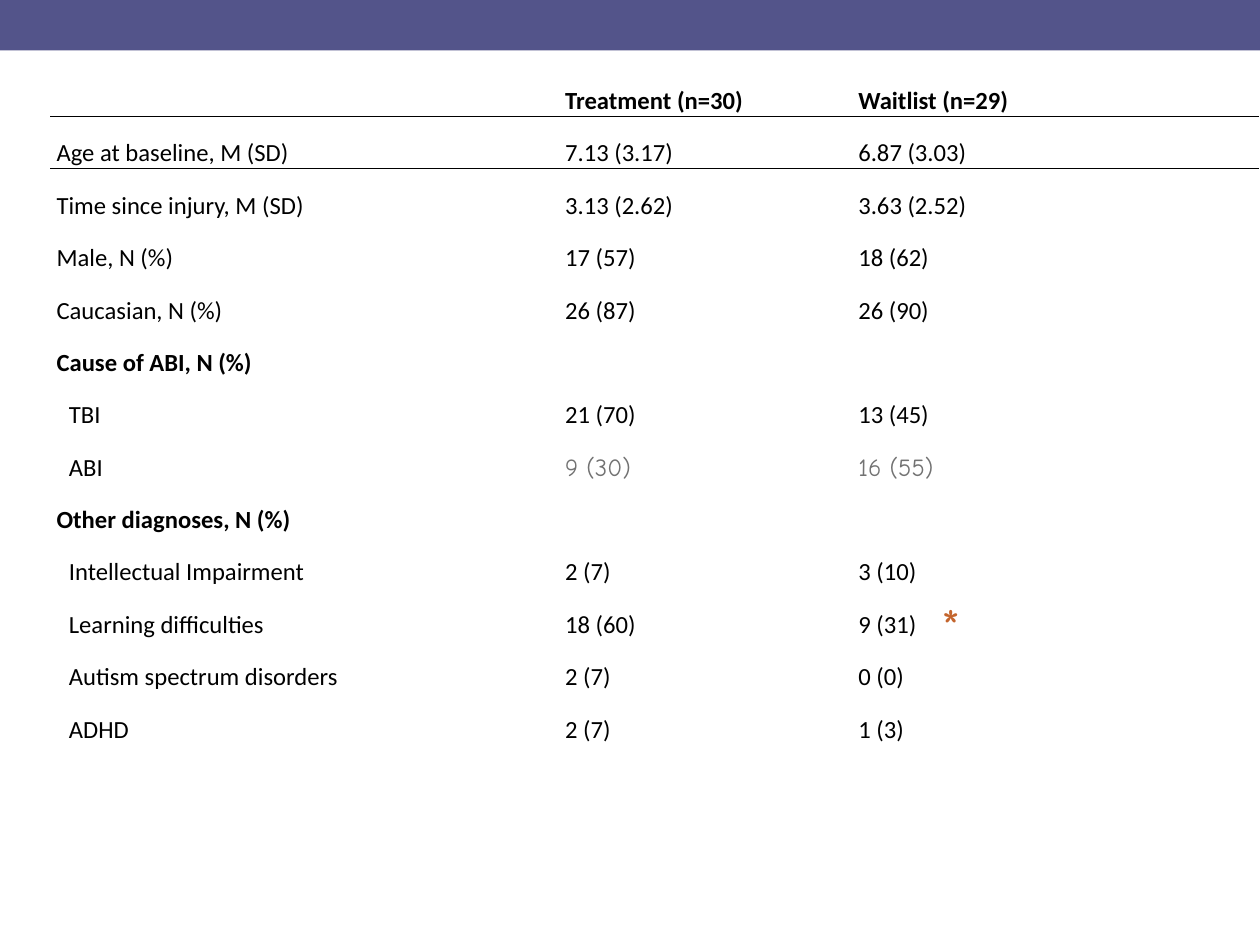
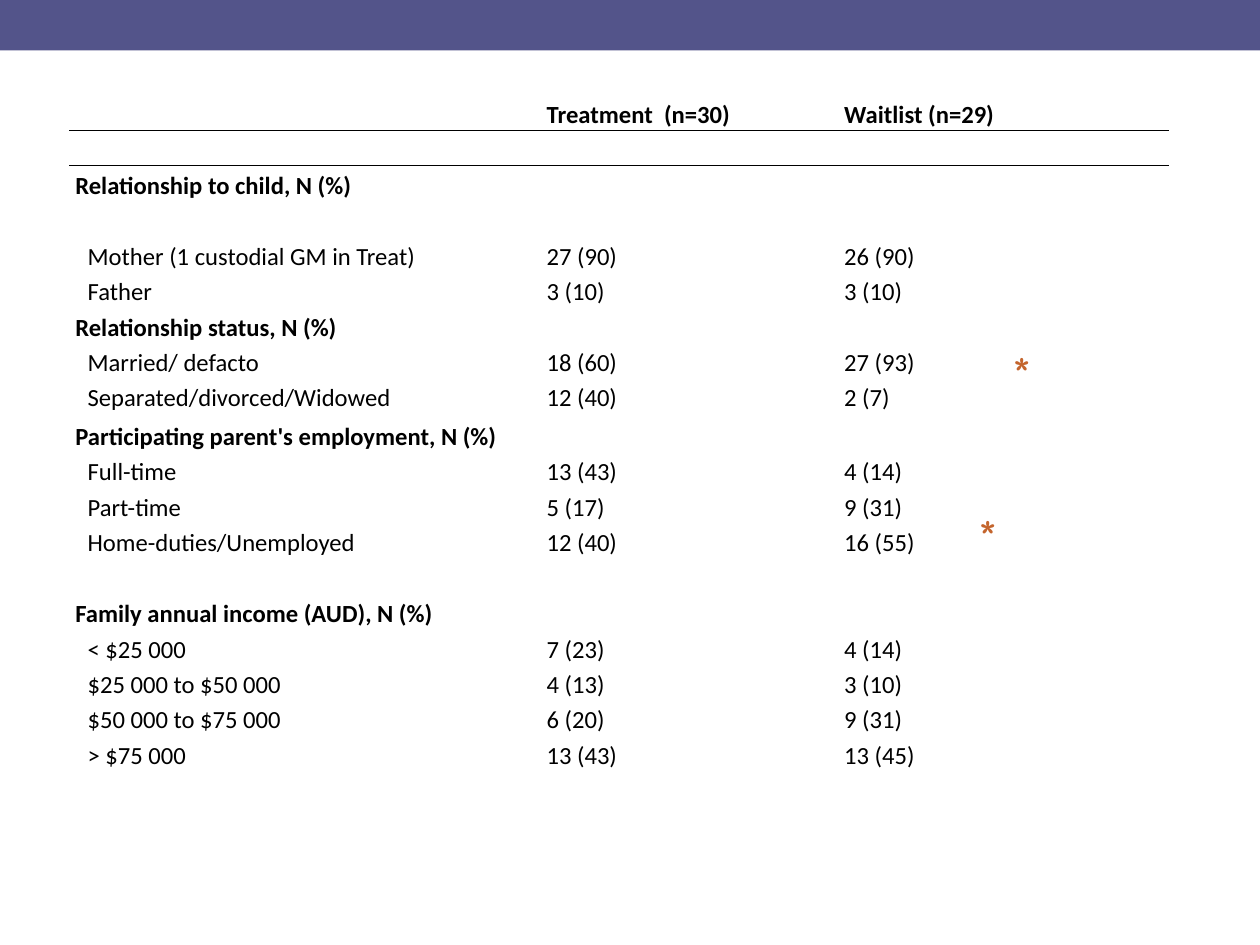
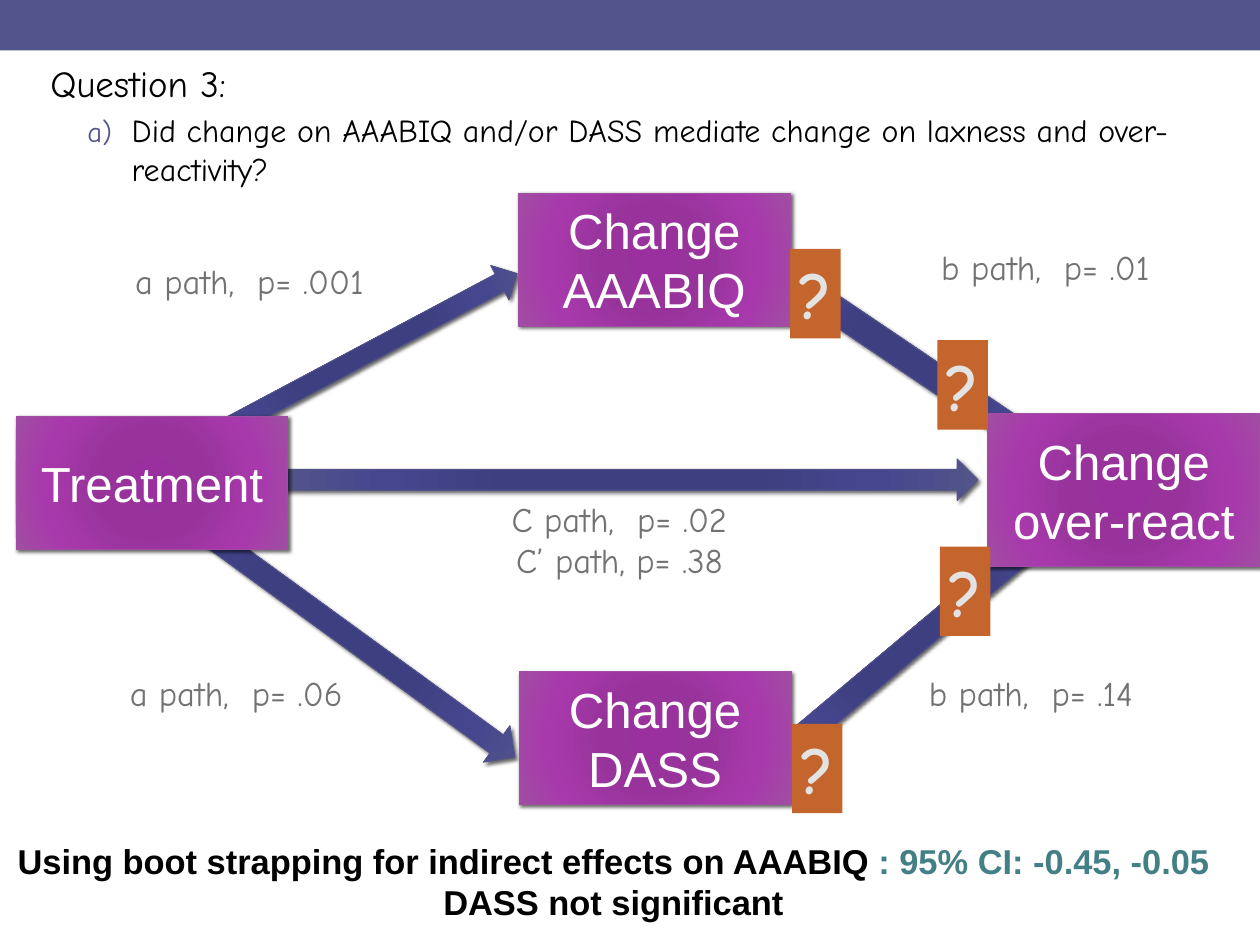
from lxml import etree
from pptx import Presentation
from pptx.dml.color import RGBColor
from pptx.enum.shapes import MSO_SHAPE
from pptx.enum.text import MSO_ANCHOR, PP_ALIGN
from pptx.oxml import parse_xml
from pptx.oxml.ns import qn
from pptx.util import Pt

RECT, ARROW = MSO_SHAPE.RECTANGLE, MSO_SHAPE.RIGHT_ARROW
LEFT, CENTER = PP_ALIGN.LEFT, PP_ALIGN.CENTER
TOP, MIDDLE, BOTTOM = MSO_ANCHOR.TOP, MSO_ANCHOR.MIDDLE, MSO_ANCHOR.BOTTOM

WIDE, HIGH, BAND = 1024, 768, 41
INDIGO, ORANGE, TEAL = "53548A", "C4652D", "438086"
BLACK, WHITE, GREY, PALE, SLATE = "000000", "FFFFFF", "727272", "E3E3E3", "3D405C"
VIOLET = "A04DA3"
INDIGOS = [(0, "3B3D82"), (34, "3E3F80"), (70, "45468E"), (100, INDIGO)]
VIOLETS = [(0, "9A309E"), (34, "97339A"), (70, "A839AC"), (100, VIOLET)]
COMIC, SANS, BODY = "Comic Neue", "Arial", "Calibri"
PLAIN = "{2D5ABB26-0587-4C30-8999-92F81FD0307C}"
DRAWING = 'xmlns:a="http://schemas.openxmlformats.org/drawingml/2006/main"'

# A row with one entry is a section heading; rows below it are indented.
CHILD = [
    ("", "Treatment (n=30)", "Waitlist (n=29)"),
    ("Age at baseline, M (SD)", "7.13 (3.17)", "6.87 (3.03)"),
    ("Time since injury, M (SD)", "3.13 (2.62)", "3.63 (2.52)"),
    ("Male, N (%)", "17 (57)", "18 (62)"),
    ("Caucasian, N (%)", "26 (87)", "26 (90)"),
    ("Cause of ABI, N (%)",),
    ("TBI", "21 (70)", "13 (45)"),
    ("ABI", "9 (30)", "16 (55)"),
    ("Other diagnoses, N (%)",),
    ("Intellectual Impairment", "2 (7)", "3 (10)"),
    ("Learning difficulties", "18 (60)", "9 (31)"),
    ("Autism spectrum disorders", "2 (7)", "0 (0)"),
    ("ADHD", "2 (7)", "1 (3)"),
]
FAMILY = [
    ("", "Treatment  (n=30)", "Waitlist (n=29)"),
    (),
    ("Relationship to child, N (%)",),
    ("Mother (1 custodial GM in Treat)", "27 (90)", "26 (90)"),
    ("Father", "3 (10)", "3 (10)"),
    ("Relationship status, N (%)",),
    ("Married/ defacto", "18 (60)", "27 (93)"),
    ("Separated/divorced/Widowed", "12 (40)", "2 (7)"),
    ("Participating parent's employment, N (%)",),
    ("Full-time", "13 (43)", "4 (14)"),
    ("Part-time", "5 (17)", "9 (31)"),
    ("Home-duties/Unemployed", "12 (40)", "16 (55)"),
    ("Family annual income (AUD), N (%)",),
    ("< $25 000", "7 (23)", "4 (14)"),
    ("$25 000 to $50 000", "4 (13)", "3 (10)"),
    ("$50 000 to $75 000", "6 (20)", "9 (31)"),
    ("> $75 000", "13 (43)", "13 (45)"),
]
TALL = {0: 57.6, 3: 57.6, 7: 24.5, 8: 32.4, 12: 57.6}
TABLES = [
    dict(rows=CHILD, at=(41, 51.8), cols=(413.3, 238.3, 330.5),
         heights=[42.6] * len(CHILD), grey="ABI", stars=[(746, 480.2)]),
    dict(rows=FAMILY, at=(56.2, 48.2), cols=(383, 241.9, 269.3),
         heights=[TALL.get(i, 28.8) for i in range(len(FAMILY))],
         grey=None, stars=[(776.2, 408.2), (803.5, 275.8)]),
]

TITLE = "Question 3:"
ASK = "Did change on AAABIQ and/or DASS mediate change on laxness and over-reactivity?"
BARS = [
    (RECT, (597.6, 508.3, 300.2, 20.2), 320),
    (RECT, (727.2, 169.9, 22.3, 244.1), 124),
]
ARROWS = [
    (ARROW, (151.2, 273.6, 285.8, 31.7), 332),
    (ARROW, (228.2, 373, 566.6, 33.8), 0),
    (ARROW, (85.7, 488.9, 367.9, 36.7), 36),
]
BOXES = [
    ("Change AAABIQ", (421.2, 157, 221, 108)),
    ("Change over-react", (802.8, 336.2, 221, 124.6)),
    ("Change DASS", (421.9, 545.8, 221, 108)),
    ("Treatment", (13, 338.4, 221, 108)),
]
MARKS = [(642.2, 202.3), (761.8, 276.5), (643.7, 588.2), (763.9, 444.2)]
LABELS = [
    (["C path,  p= .02", "C’ path, p= .38"], (52.6, 401, 901.4, 108.7)),
    (["a path,  p= .001"], (46.8, 208.1, 311.8, 41)),
    (["b path,  p= .01"], (710.6, 196.6, 277.9, 41)),
    (["a path,  p= .06"], (36, 542.9, 311.8, 41)),
    (["b path,  p= .14"], (681.8, 542.9, 311.8, 41)),
]
RESULT = [
    [("Using boot strapping for indirect effects on AAABIQ ", BLACK),
     (": 95% CI: -0.45, -0.05", TEAL)],
    [("DASS not significant", BLACK)],
]


def rgb(code):
    return RGBColor.from_string(code)


def style(run, size, font, color, bold=False):
    run.font.size, run.font.name, run.font.bold = Pt(size), font, bold
    run.font.color.rgb = rgb(color)


def line_xml(tag, color, width):
    return parse_xml(f'<a:{tag} {DRAWING} w="{Pt(width)}"><a:solidFill>'
                     f'<a:srgbClr val="{color}"/></a:solidFill></a:{tag}>')


def write(frame, paras, size, font, color, bold=False, align=CENTER):
    """Fill a frame with paragraphs, each a string or a list of (text, color)."""
    frame.word_wrap = True
    for i, parts in enumerate(paras):
        para = frame.paragraphs[0] if i == 0 else frame.add_paragraph()
        para.alignment = align
        if isinstance(parts, str):
            parts = [(parts, color)]
        for text, tint in parts:
            run = para.add_run()
            run.text = text
            style(run, size, font, tint, bold)


def add_text(slide, at, *args, **kw):
    frame = slide.shapes.add_textbox(*map(Pt, at)).text_frame
    write(frame, *args, **kw)
    return frame


def add_flat(slide, at, color):
    shape = slide.shapes.add_shape(RECT, *map(Pt, at))
    shape.shadow.inherit = False
    shape.fill.solid()
    shape.fill.fore_color.rgb = rgb(color)
    shape.line.fill.background()
    return shape


def add_glow(slide, kind, at, stops, turn=0):
    """Add a shape with a radial gradient, thin edge and soft shadow."""
    shape = add_flat(slide, at, stops[-1][1])
    shape.element.spPr.find(qn("a:prstGeom")).set(
        "prst", "rightArrow" if kind == ARROW else "rect")
    shape.rotation = turn
    shape.line.color.rgb = rgb(stops[-1][1])
    shape.line.width = Pt(0.75)
    marks = "".join(f'<a:gs pos="{pos * 1000}"><a:srgbClr val="{color}"/></a:gs>'
                    for pos, color in stops)
    props = shape.element.spPr
    props.replace(props.find(qn("a:solidFill")), parse_xml(
        f'<a:gradFill {DRAWING} rotWithShape="1"><a:gsLst>{marks}</a:gsLst>'
        '<a:path path="circle"><a:fillToRect l="100000" t="100000" r="100000" '
        'b="100000"/></a:path></a:gradFill>'))
    props.find(qn("a:effectLst")).append(parse_xml(
        f'<a:outerShdw {DRAWING} blurRad="{Pt(3)}" dist="{Pt(2)}" dir="2700000" '
        'rotWithShape="0"><a:srgbClr val="000000"><a:alpha val="60000"/>'
        '</a:srgbClr></a:outerShdw>'))
    return shape


def add_band(prs, slide):
    """Draw the top band and move it to the master, so that all slides show it."""
    band = add_flat(slide, (0, 0, WIDE, BAND), INDIGO).element
    band.nvSpPr.cNvPr.set("id", "90")
    prs.slide_master.shapes.element.append(band)


def add_grid(slide, rows, at, cols, heights, grey):
    size = (sum(cols), sum(heights))
    grid = slide.shapes.add_table(len(rows), len(cols), *map(Pt, at + size)).table
    grid.first_row = grid.horz_banding = False
    grid._tbl.tblPr.find(qn("a:tableStyleId")).text = PLAIN
    for col, width in zip(grid.columns, cols):
        col.width = Pt(width)
    nested = False
    for r, row in enumerate(rows):
        grid.rows[r].height = Pt(heights[r])
        head = len(row) == 1
        for c in range(len(cols)):
            cell = grid.cell(r, c)
            cell.fill.background()
            cell.vertical_anchor = BOTTOM
            cell.margin_left = cell.margin_right = Pt(5)
            cell.margin_top = cell.margin_bottom = 0
            if r < 2:
                edge = line_xml("lnT" if r else "lnB", BLACK, 1)
                cell._tc.get_or_add_tcPr().insert(0, edge)
            if c >= len(row) or not row[c]:
                continue
            faint = c > 0 and row[0] == grey
            write(cell.text_frame, [row[c]], 20, COMIC if faint else BODY,
                  GREY if faint else BLACK, r == 0 or head, LEFT)
            para = cell.text_frame.paragraphs[0]
            if not faint:
                para.line_spacing = 1.15
            if c == 0 and nested and not head:
                para._p.get_or_add_pPr().set("marL", str(Pt(10)))
        nested = nested or head


def add_question(slide):
    frame = add_text(slide, (0, 44, WIDE, 158), [TITLE, ASK], 30, COMIC, BLACK,
                     align=LEFT)
    frame.margin_left = frame.margin_right = Pt(10)
    frame.margin_top = frame.margin_bottom = Pt(5)
    title, ask = frame.paragraphs
    title.space_before, ask.space_before = Pt(6), Pt(5.2)
    ask.runs[0].font.size = Pt(26)
    title._p.get_or_add_pPr().set("marL", str(Pt(31)))
    props = ask._p.get_or_add_pPr()
    props.set("marL", str(Pt(97)))
    props.set("indent", str(Pt(-36)))
    color = etree.SubElement(props, qn("a:buClr"))
    etree.SubElement(color, qn("a:srgbClr"), val=INDIGO)
    etree.SubElement(props, qn("a:buSzPct"), val="90000")
    etree.SubElement(props, qn("a:buFont"), typeface=COMIC)
    etree.SubElement(props, qn("a:buAutoNum"), type="alphaLcParenR")


def add_model(slide):
    for kind, at, turn in BARS:
        add_glow(slide, kind, at, INDIGOS, turn)
    add_question(slide)
    for kind, at, turn in ARROWS:
        add_glow(slide, kind, at, INDIGOS, turn)
    for text, at in BOXES:
        frame = add_glow(slide, RECT, at, VIOLETS).text_frame
        frame.vertical_anchor = MIDDLE
        write(frame, [text], 40, SANS, WHITE)
    for spot in MARKS:
        frame = add_flat(slide, spot + (41, 72.7), ORANGE).text_frame
        frame.vertical_anchor = TOP
        write(frame, ["?"], 54, COMIC, PALE, True)
        frame.word_wrap = False
        run = frame.paragraphs[0].runs[0]
        run._r.get_or_add_rPr().insert(0, line_xml("ln", SLATE, 1))
    for lines, at in LABELS:
        add_text(slide, at, lines, 28, COMIC, GREY)
    add_text(slide, (0, 679, 997, 75), RESULT, 28, SANS, BLACK, True)


def main():
    prs = Presentation()
    prs.slide_width, prs.slide_height = Pt(WIDE), Pt(HIGH)
    blank = prs.slide_layouts[6]
    slides = [prs.slides.add_slide(blank) for _ in range(len(TABLES) + 1)]
    add_band(prs, slides[0])
    for slide, data in zip(slides, TABLES):
        add_grid(slide, data["rows"], data["at"], data["cols"],
                 data["heights"], data["grey"])
        for spot in data["stars"]:
            add_text(slide, spot + (54, 55.4), ["*"], 40, COMIC, ORANGE)
    add_model(slides[-1])
    prs.save("out.pptx")


if __name__ == "__main__":
    main()
